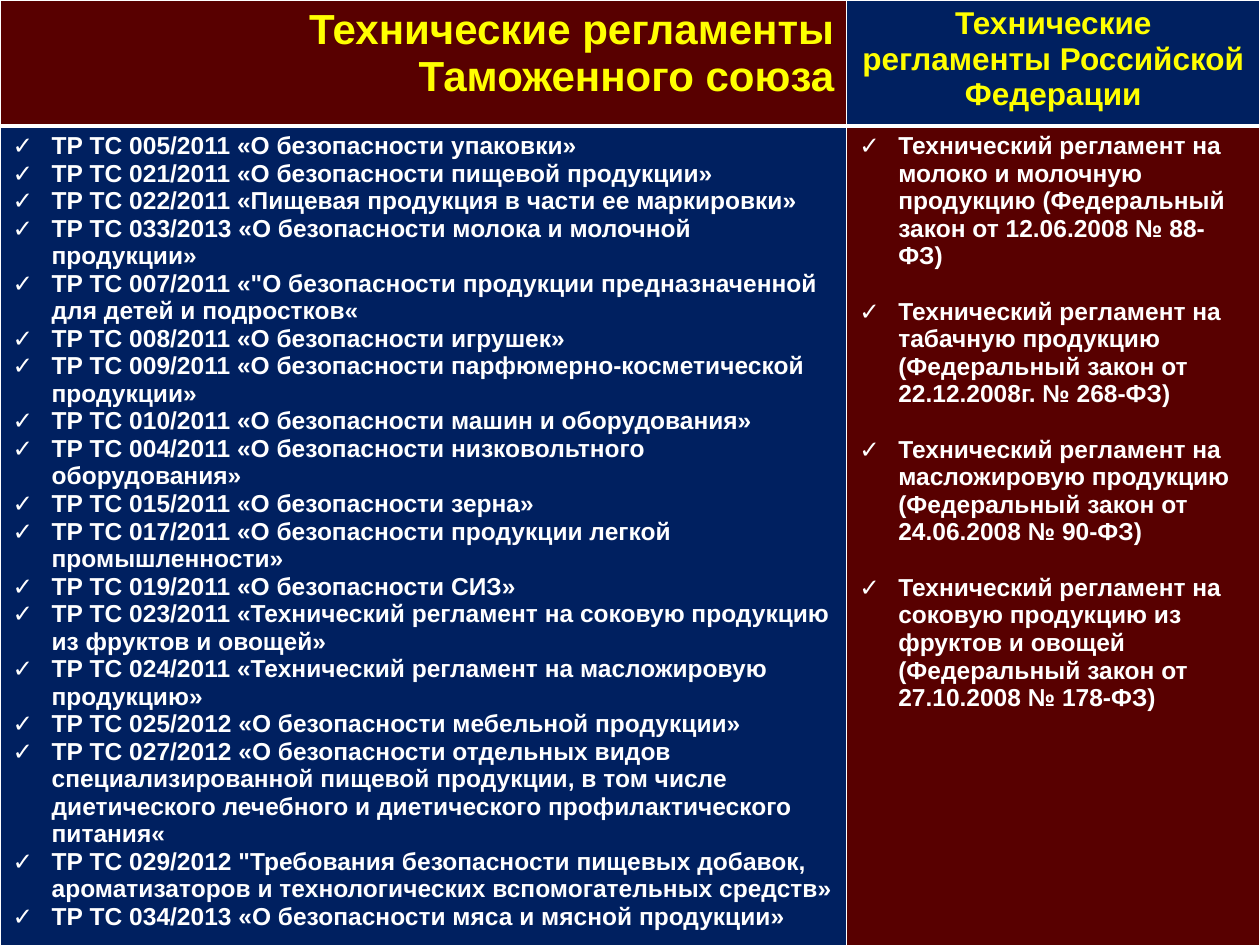
from dataclasses import dataclass

from lxml.etree import SubElement
from pptx import Presentation
from pptx.dml.color import RGBColor
from pptx.enum.text import PP_ALIGN as Align
from pptx.oxml.ns import qn
from pptx.util import Inches, Pt

COLORS = {"maroon": "580000", "navy": "002060", "yellow": "FFFF00", "white": "FFFFFF"}
FONT = "Arial"
COLUMN_WIDTHS = (6.72, 3.28)
ROW_HEIGHTS = (1, 6.87)
THIN, THICK = 1, 3
INDENT = 0.31


@dataclass(frozen=True)
class Section:
    """One column: a heading above a checklist of regulations."""
    heading: str
    heading_size: int
    heading_align: Align
    heading_margin: float
    heading_fill: str
    list_fill: str
    item_gap: int
    items: tuple[str, ...]


SECTIONS = (
    Section(
        "Технические регламенты Таможенного союза",
        24, Align.RIGHT, 1.5, "maroon", "navy", 0,
        (
            "ТР ТС 005/2011 «О безопасности упаковки»",
            "ТР ТС 021/2011 «О безопасности пищевой продукции»",
            "ТР ТС 022/2011 «Пищевая продукция в части ее маркировки»",
            "ТР ТС 033/2013 «О безопасности молока и молочной продукции»",
            "ТР ТС 007/2011 «\"О безопасности продукции предназначенной для детей и подростков«",
            "ТР ТС 008/2011 «О безопасности игрушек»",
            "ТР ТС 009/2011 «О безопасности парфюмерно-косметической продукции»",
            "ТР ТС 010/2011 «О безопасности машин и оборудования»",
            "ТР ТС 004/2011 «О безопасности низковольтного оборудования»",
            "ТР ТС 015/2011 «О безопасности зерна»",
            "ТР ТС 017/2011 «О безопасности продукции легкой промышленности»",
            "ТР ТС 019/2011 «О безопасности СИЗ»",
            "ТР ТС 023/2011 «Технический регламент на соковую продукцию из фруктов и овощей»",
            "ТР ТС 024/2011 «Технический регламент на масложировую продукцию»",
            "ТР ТС 025/2012 «О безопасности мебельной продукции»",
            "ТР ТС 027/2012 «О безопасности отдельных видов специализированной пищевой "
            "продукции, в том числе диетического лечебного и диетического "
            "профилактического питания«",
            "ТР ТС 029/2012 \"Требования безопасности пищевых добавок, ароматизаторов "
            "и технологических вспомогательных средств»",
            "ТР ТС 034/2013 «О безопасности мяса и мясной продукции»",
        ),
    ),
    Section(
        "Технические регламенты Российской Федерации",
        18, Align.CENTER, 0.1, "navy", "maroon", 16,
        (
            "Технический регламент на молоко и молочную продукцию "
            "(Федеральный закон от 12.06.2008 № 88-ФЗ)",
            "Технический регламент на табачную продукцию "
            "(Федеральный закон от 22.12.2008г. № 268-ФЗ)",
            "Технический регламент на масложировую продукцию "
            "(Федеральный закон от 24.06.2008 № 90-ФЗ)",
            "Технический регламент на соковую продукцию из фруктов и овощей "
            "(Федеральный закон от 27.10.2008 № 178-ФЗ)",
        ),
    ),
)


def write(para, text: str, *, size: int, color: str, align: Align = Align.LEFT) -> None:
    para.alignment = align
    span = para.add_run()
    span.text = text
    span.font.name = FONT
    span.font.size = Pt(size)
    span.font.bold = True
    span.font.color.rgb = RGBColor.from_string(COLORS[color])


def add_check_mark(para) -> None:
    properties = para._p.get_or_add_pPr()
    properties.set("marL", str(Inches(INDENT)))
    properties.set("indent", str(-Inches(INDENT)))
    SubElement(properties, qn("a:buFont"), typeface=FONT)
    SubElement(properties, qn("a:buChar"), char="✓")


def style_cell(cell, fill: str, *, top: int, bottom: int) -> None:
    """Draw the white borders, which must precede the fill in the XML, then fill."""
    properties = cell._tc.get_or_add_tcPr()
    for side, width in (("L", THIN), ("R", THIN), ("T", top), ("B", bottom)):
        line = SubElement(properties, qn(f"a:ln{side}"), w=str(Pt(width)))
        solid = SubElement(line, qn("a:solidFill"))
        SubElement(solid, qn("a:srgbClr"), val=COLORS["white"])
    cell.fill.solid()
    cell.fill.fore_color.rgb = RGBColor.from_string(COLORS[fill])


def fill_column(table, column: int, section: Section) -> None:
    heading, checklist = table.cell(0, column), table.cell(1, column)
    style_cell(heading, section.heading_fill, top=THIN, bottom=THICK)
    style_cell(checklist, section.list_fill, top=THICK, bottom=THIN)

    heading.margin_left = Inches(section.heading_margin)
    write(heading.text_frame.paragraphs[0], section.heading,
          size=section.heading_size, color="yellow", align=section.heading_align)

    frame = checklist.text_frame
    for index, item in enumerate(section.items):
        para = frame.add_paragraph() if index else frame.paragraphs[0]
        para.space_before = Pt(section.item_gap if index else 0)
        add_check_mark(para)
        write(para, item, size=14, color="white")


def main() -> None:
    deck = Presentation()
    deck.slide_width, deck.slide_height = Inches(10), Inches(7.5)
    page = deck.slides.add_slide(deck.slide_layouts[6])

    table = page.shapes.add_table(
        len(ROW_HEIGHTS), len(COLUMN_WIDTHS), 0, 0,
        Inches(sum(COLUMN_WIDTHS)), Inches(sum(ROW_HEIGHTS))).table
    for row, height in zip(table.rows, ROW_HEIGHTS):
        row.height = Inches(height)
    for column, width in zip(table.columns, COLUMN_WIDTHS):
        column.width = Inches(width)
    for index, section in enumerate(SECTIONS):
        fill_column(table, index, section)

    deck.save("out.pptx")


if __name__ == "__main__":
    main()
